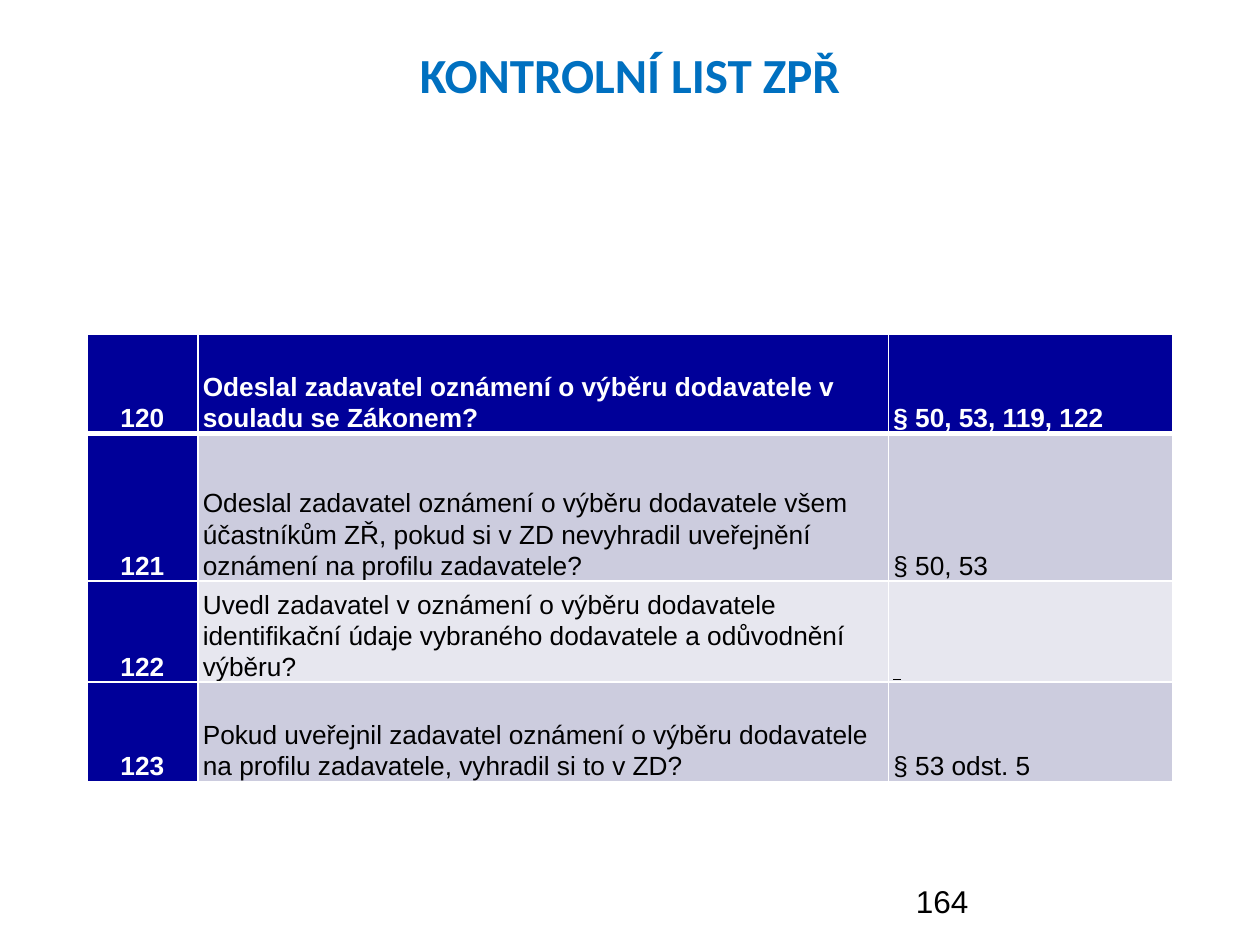
from dataclasses import dataclass

from lxml.etree import SubElement
from pptx import Presentation
from pptx.dml.color import RGBColor as Rgb
from pptx.enum.text import MSO_ANCHOR as Anchor, PP_ALIGN as Align
from pptx.oxml.ns import qn
from pptx.util import Inches, Pt


@dataclass(frozen=True)
class Theme:
    title: str = "0070C0"
    header: str = "000099"
    band_dark: str = "CCCCDE"
    band_light: str = "E7E7EF"
    white: str = "FFFFFF"
    black: str = "000000"
    heading_font: str = "Calibri"
    body_font: str = "Arial"
    title_size: int = 28
    table_size: int = 15
    number_size: int = 18


THEME = Theme()
COLUMN_WIDTHS = (0.88, 5.48, 2.26)
ROW_HEIGHTS = (0.79, 1.17, 0.79, 0.79)
CHECKS = (
    ("120", "Odeslal zadavatel oznámení o výběru dodavatele v souladu se Zákonem?",
     "§ 50, 53, 119, 122"),
    ("121", "Odeslal zadavatel oznámení o výběru dodavatele všem účastníkům ZŘ, "
            "pokud si v ZD nevyhradil uveřejnění oznámení na profilu zadavatele?",
     "§ 50, 53"),
    ("122", "Uvedl zadavatel v oznámení o výběru dodavatele identifikační údaje "
            "vybraného dodavatele a odůvodnění výběru?", " "),
    ("123", "Pokud uveřejnil zadavatel oznámení o výběru dodavatele na profilu "
            "zadavatele, vyhradil si to v ZD?", "§ 53 odst. 5"),
)


def set_all(target, formats):
    for name, value in formats.items():
        setattr(target, name, value)


def write(paragraph, text, color, **font_formats):
    run = paragraph.add_run()
    run.text = text
    set_all(run.font, font_formats)
    run.font.color.rgb = Rgb.from_string(color)


def add_label(slide, box, text, color, align=Align.LEFT, **font_formats):
    frame = slide.shapes.add_textbox(*map(Inches, box)).text_frame
    frame.word_wrap = True
    paragraph = frame.paragraphs[0]
    paragraph.alignment = align
    write(paragraph, text, color, **font_formats)


def add_borders(cell, widths):
    """Draw white cell borders; widths maps a side (L, R, T, B) to points."""
    properties = cell._tc.get_or_add_tcPr()
    for side, width in widths.items():
        line = SubElement(properties, qn(f"a:ln{side}"), w=str(Pt(width)))
        fill = SubElement(line, qn("a:solidFill"))
        SubElement(fill, qn("a:srgbClr"), val=THEME.white)


def format_cell(cell, text, row, column):
    is_header = row == 0 or column == 0
    band = THEME.band_dark if row % 2 else THEME.band_light
    # Borders come before the fill in the cell properties.
    add_borders(cell, {"L": 1, "R": 1, "T": 3 if row == 1 else 1,
                       "B": 3 if row == 0 else 1})
    cell.fill.solid()
    cell.fill.fore_color.rgb = Rgb.from_string(THEME.header if is_header else band)
    set_all(cell, {
        "margin_left": Inches(0.04), "margin_right": Inches(0.04),
        "margin_top": 0, "margin_bottom": 0, "vertical_anchor": Anchor.BOTTOM,
    })
    paragraph = cell.text_frame.paragraphs[0]
    set_all(paragraph, {"alignment": Align.LEFT if column else Align.CENTER,
                        "line_spacing": 1.07})
    write(paragraph, text, THEME.white if is_header else THEME.black,
          name=THEME.body_font, size=Pt(THEME.table_size), bold=is_header,
          underline=not text.strip())


def add_checklist(slide, box):
    table = slide.shapes.add_table(len(CHECKS), len(COLUMN_WIDTHS),
                                   *map(Inches, box)).table
    set_all(table, {"first_row": True, "first_col": True, "horz_banding": True})
    for column, width in zip(table.columns, COLUMN_WIDTHS):
        column.width = Inches(width)
    for row, height in zip(table.rows, ROW_HEIGHTS):
        row.height = Inches(height)
    for row, check in enumerate(CHECKS):
        for column, text in enumerate(check):
            format_cell(table.cell(row, column), text, row, column)


def main():
    deck = Presentation()
    set_all(deck, {"slide_width": Inches(10), "slide_height": Inches(7.5)})
    slide = deck.slides.add_slide(deck.slide_layouts[6])
    add_label(slide, (0.5, 0.3, 9, 1.25), "KONTROLNÍ LIST ZPŘ", THEME.title,
              Align.CENTER, name=THEME.heading_font, size=Pt(THEME.title_size),
              bold=True)
    add_checklist(slide, (0.69, 2.65, sum(COLUMN_WIDTHS), sum(ROW_HEIGHTS)))
    add_label(slide, (7.17, 6.95, 2.33, 0.4), "164", THEME.black,
              name=THEME.body_font, size=Pt(THEME.number_size))
    deck.save("out.pptx")


if __name__ == "__main__":
    main()
